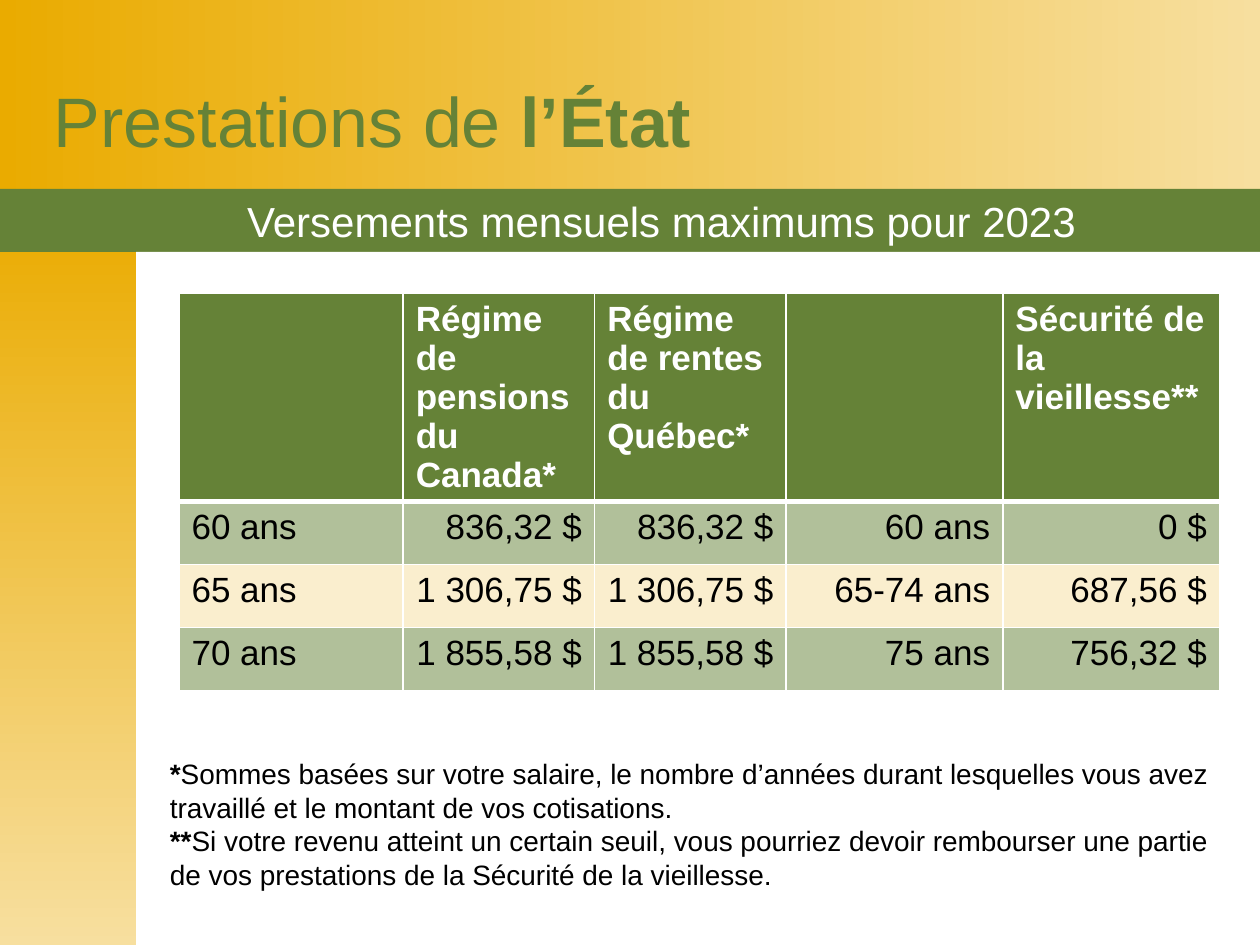
"""Builds the slide on maximum monthly state benefits for 2023."""
from lxml import etree
from pptx import Presentation
from pptx import util as u
from pptx.dml.color import RGBColor
from pptx.enum import shapes, text
from pptx.oxml.ns import qn

GREEN, GOLD, CREAM, WHITE, BLACK = "658237", "EAAB00", "F7DF9F", "FFFFFF", "000000"
LEFT, MID, RIGHT = text.PP_ALIGN.LEFT, text.PP_ALIGN.CENTER, text.PP_ALIGN.RIGHT

BARS = [
    ((0, 0, 10, 1.5), (GOLD, CREAM), 0),
    ((0, 1.67, 1.08, 5.83), (GOLD, CREAM), 270),
    ((-0.03, 1.5, 10.03, 0.5), (GREEN,), 0),
    ((1.08, 2, 8.92, 5.5), (WHITE,), 0),
]
TITLE = [[("Versements mensuels maximums pour 2023", False)]]
HEAD = [[("Prestations de ", False), ("l’État", True)]]
NOTES = [
    [("*", True), ("Sommes basées sur votre salaire, le nombre d’années durant "
                   "lesquelles vous avez travaillé et le montant de vos cotisations.", False)],
    [("**", True), ("Si votre revenu atteint un certain seuil, vous pourriez devoir rembourser "
                    "une partie de vos prestations de la Sécurité de la vieillesse.", False)],
]
ROWS = [
    ["", "Régime de pensions du Canada*", "Régime de rentes du Québec*", "",
     "Sécurité de la vieillesse**"],
    ["60 ans", "836,32 $", "836,32 $", "60 ans", "0 $"],
    ["65 ans", "1 306,75 $", "1 306,75 $", "65-74 ans", "687,56 $"],
    ["70 ans", "1 855,58 $", "1 855,58 $", "75 ans", "756,32 $"],
]
WIDTHS = [1.78, 1.52, 1.52, 1.72, 1.72]
HEIGHTS = [1.3, 0.5, 0.5, 0.5]


def rgb(hue):
    return RGBColor.from_string(hue)


def box(at):
    return [u.Inches(n) for n in at]


def write(frame, paras, size, hue, align=LEFT):
    for i, runs in enumerate(paras):
        para = frame.paragraphs[0] if i == 0 else frame.add_paragraph()
        para.alignment = align
        for words, bold in runs:
            run = para.add_run()
            run.text = words
            look = {"name": "Arial", "size": u.Pt(size), "bold": bold}
            for key, val in look.items():
                setattr(run.font, key, val)
            run.font.color.rgb = rgb(hue)


def setup(frame, anchor):
    look = {"word_wrap": True, "auto_size": text.MSO_AUTO_SIZE.NONE, "vertical_anchor": anchor}
    for key, val in look.items():
        setattr(frame, key, val)


def add_bar(slide, at, hues, angle):
    bar = slide.shapes.add_shape(shapes.MSO_SHAPE.RECTANGLE, *box(at))
    bar.shadow.inherit = False
    bar.line.fill.background()
    if len(hues) > 1:
        bar.fill.gradient()
        bar.fill.gradient_angle = angle
        for stop, hue, pos in zip(bar.fill.gradient_stops, hues, (0, 1)):
            stop.color.rgb = rgb(hue)
            stop.position = pos
    else:
        bar.fill.solid()
        bar.fill.fore_color.rgb = rgb(hues[0])


def add_text(slide, at, paras, size, hue):
    frame = slide.shapes.add_textbox(*box(at)).text_frame
    setup(frame, text.MSO_ANCHOR.BOTTOM)
    write(frame, paras, size, hue)


def paint(cell, hue, alpha, base):
    cell.fill.solid()
    cell.fill.fore_color.rgb = rgb(hue)
    props = cell._tc.get_or_add_tcPr()
    if alpha < 100:
        tint = props.find(".//" + qn("a:srgbClr"))
        etree.SubElement(tint, qn("a:alpha"), val=str(alpha * 1000))
    for i, side in enumerate("LRTB"):
        wide = base if side == "B" else 1
        line = etree.Element(qn("a:ln" + side), w=str(u.Pt(wide)))
        fill = etree.SubElement(line, qn("a:solidFill"))
        etree.SubElement(fill, qn("a:srgbClr"), val=WHITE)
        props.insert(i, line)


def add_grid(slide):
    shape = slide.shapes.add_table(len(ROWS), len(WIDTHS), *box((1.42, 2.33, 8.25, 3.27)))
    grid = shape.table
    for col, wide in zip(grid.columns, WIDTHS):
        col.width = u.Inches(wide)
    for r, row in enumerate(ROWS):
        grid.rows[r].height = u.Inches(HEIGHTS[r])
        top = r == 0
        for c, words in enumerate(row):
            cell = grid.cell(r, c)
            paint(cell, CREAM if r == 2 else GREEN, 100 if top else 50, 3 if top else 1)
            if words:
                write(cell.text_frame, [[(words, top)]], 20, WHITE if top else BLACK,
                      LEFT if top or c == 0 else RIGHT)


def main():
    deck = Presentation()
    deck.slide_width, deck.slide_height = box((10, 7.5))
    slide = deck.slides.add_slide(deck.slide_layouts[5])
    for bar in BARS:
        add_bar(slide, *bar)
    title = slide.shapes.title
    title.left, title.top, title.width, title.height = box((1, 1.5, 8.5, 0.5))
    setup(title.text_frame, text.MSO_ANCHOR.MIDDLE)
    write(title.text_frame, TITLE, 24, WHITE, MID)
    slide.shapes._spTree.append(title._element)
    add_text(slide, (1.25, 5.83, 8.5, 1.29), NOTES, 16, BLACK)
    add_text(slide, (0.33, 0.58, 8.5, 0.75), HEAD, 40, GREEN)
    add_grid(slide)
    deck.save("out.pptx")


if __name__ == "__main__":
    main()
